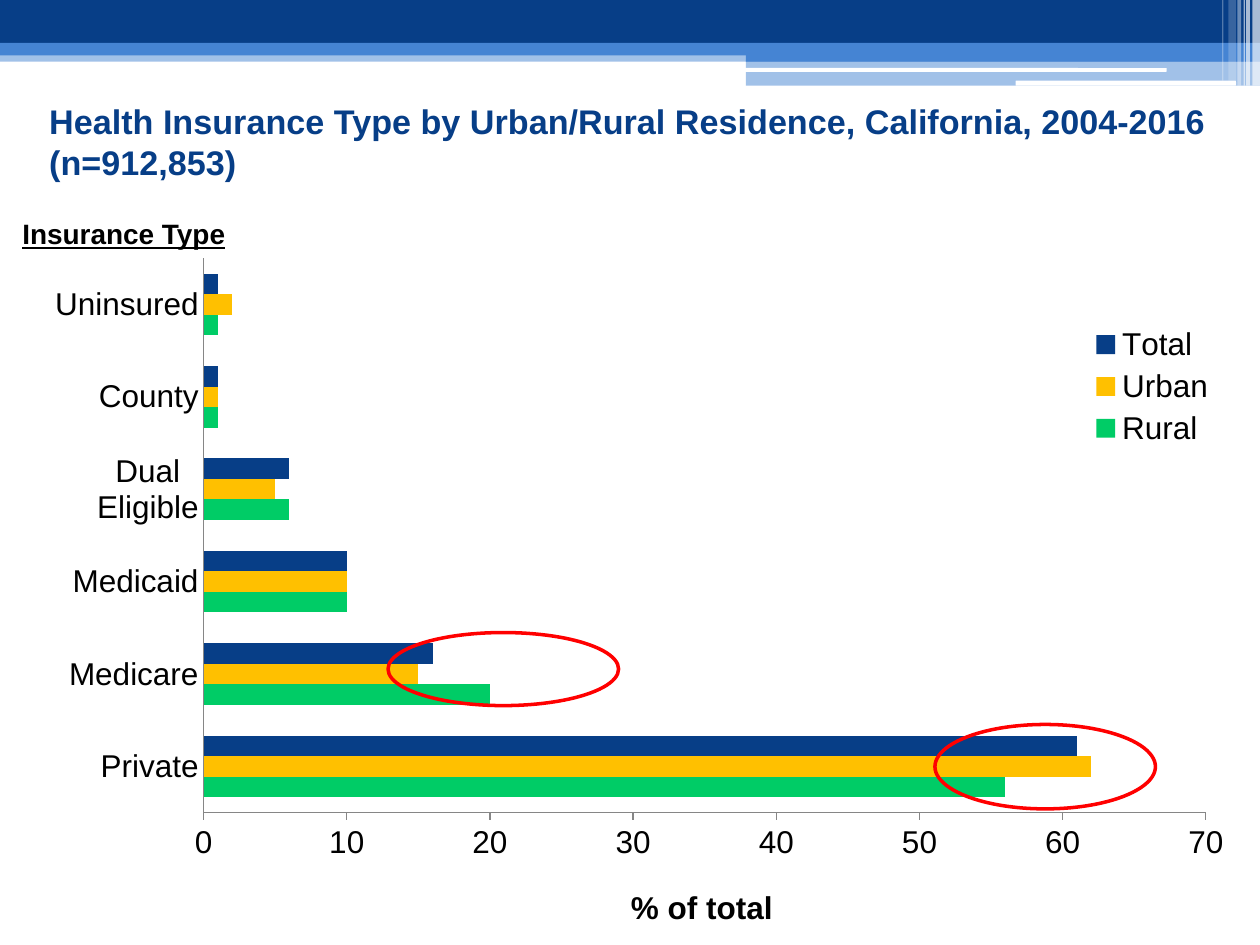
from dataclasses import dataclass

from lxml import etree
from pptx import Presentation
from pptx import util as u
from pptx.chart import data as chart_data
from pptx.dml.color import RGBColor
from pptx.enum import chart as charts, shapes, text
from pptx.oxml import ns


@dataclass(frozen=True)
class Theme:
    """Colours, font and type sizes of the slide."""
    navy: str = "073E87"
    blue: str = "4584D3"
    white: str = "FFFFFF"
    black: str = "000000"
    red: str = "FF0000"
    gold: str = "FFC000"
    green: str = "00CC66"
    grey: str = "868686"
    font: str = "Arial"
    title_size: float = 19.5
    chart_size: float = 18
    label_size: float = 16


THEME = Theme()
SHAPE = shapes.MSO_SHAPE

BANDS = [
    (0, 0.4, 10, 0.09, THEME.blue, 50),
    (0, 0, 10, 0.34, THEME.navy, 100),
    (0, 0.34, 10, 0.1, THEME.blue, 100),
    (5.92, 0.39, 4.08, 0.1, THEME.blue, 100),
    (5.92, 0.48, 4.08, 0.2, THEME.blue, 50),
]
HIGHLIGHTS = [(5.91, 0.54, 3.35, 0.03), (8.06, 0.64, 1.75, 0.04)]
STRIPES = [
    (9.94, 0.06, 0.68, 65),
    (9.89, 0.03, 0.68, 65),
    (9.87, 0.01, 0.68, 60),
    (9.82, 0.03, 0.68, 40),
    (9.75, 0.06, 0.64, 20),
    (9.7, 0.01, 0.64, 30),
]
CATEGORIES = ["Private", "Medicare", "Medicaid", "Dual Eligible", "County", "Uninsured"]
SERIES = [
    ("Rural", [56, 20, 10, 6, 1, 1], THEME.green),
    ("Urban", [62, 15, 10, 5, 1, 2], THEME.gold),
    ("Total", [61, 16, 10, 6, 1, 1], THEME.navy),
]
CALLOUTS = [(3.08, 5.02, 1.83, 0.58), (7.42, 5.75, 1.75, 0.67)]


def colour(value):
    """Turn a hex string into a colour."""
    return RGBColor.from_string(value)


def box(left, top, width, height):
    """Return the four lengths of a frame."""
    return [u.Inches(length) for length in (left, top, width, height)]


def add_bar(slide, frame, fill, opacity=100, kind=SHAPE.RECTANGLE):
    """Add a borderless filled shape with an opacity in percent."""
    shape = slide.shapes.add_shape(kind, *box(*frame))
    shape.shadow.inherit = False
    shape.line.fill.background()
    shape.fill.solid()
    shape.fill.fore_color.rgb = colour(fill)
    if opacity < 100:
        tint = shape.fill._xPr.find(".//" + ns.qn("a:srgbClr"))
        etree.SubElement(tint, ns.qn("a:alpha"), val=str(opacity * 1000))


def add_header(slide):
    """Draw the banded header."""
    for *frame, fill, opacity in BANDS:
        add_bar(slide, frame, fill, opacity)
    for frame in HIGHLIGHTS:
        add_bar(slide, frame, THEME.white, kind=SHAPE.ROUNDED_RECTANGLE)
    for left, width, height, opacity in STRIPES:
        add_bar(slide, (left, 0, width, height), THEME.white, opacity)


def write(paragraph, words, size, fill, underline=False):
    """Add one bold run to a paragraph."""
    run = paragraph.add_run()
    run.text = words
    font = run.font
    font.name, font.size, font.bold = THEME.font, u.Pt(size), True
    font.underline = underline or None
    font.color.rgb = colour(fill)


def add_title(slide, words):
    """Place and fill the title placeholder."""
    title = slide.shapes.title
    title.left, title.top, title.width, title.height = box(0.29, 0.75, 9.51, 0.75)
    frame = title.text_frame
    frame.auto_size = text.MSO_AUTO_SIZE.NONE
    frame.vertical_anchor = text.MSO_ANCHOR.MIDDLE
    frame.paragraphs[0].alignment = text.PP_ALIGN.LEFT
    write(frame.paragraphs[0], words, THEME.title_size, THEME.navy)


def add_label(slide, frame, words, size, wrap=True, underline=False):
    """Add a bold black text box."""
    label = slide.shapes.add_textbox(*box(*frame)).text_frame
    label.word_wrap = wrap
    label.auto_size = text.MSO_AUTO_SIZE.SHAPE_TO_FIT_TEXT
    write(label.paragraphs[0], words, size, THEME.black, underline)


def set_layout(parent, position, target=None):
    """Give a chart part a fixed place as fractions of the chart."""
    layout = parent.find(ns.qn("c:layout"))
    if layout is None:
        layout = etree.Element(ns.qn("c:layout"))
        before = parent.find(ns.qn("c:legendPos"))
        parent.insert(0 if before is None else parent.index(before) + 1, layout)
    manual = etree.SubElement(layout, ns.qn("c:manualLayout"))
    if target:
        etree.SubElement(manual, ns.qn("c:layoutTarget"), val=target)
    for name in ("xMode", "yMode"):
        etree.SubElement(manual, ns.qn("c:" + name), val="edge")
    for name, value in zip("xywh", position):
        etree.SubElement(manual, ns.qn("c:" + name), val=str(value))


def style_axes(chart):
    """Set the scale, ticks and lines of both axes."""
    values, categories = chart.value_axis, chart.category_axis
    values.minimum_scale, values.maximum_scale, values.major_unit = 0, 70, 10
    values.has_major_gridlines = False
    values.major_tick_mark = charts.XL_TICK_MARK.OUTSIDE
    values.tick_labels.number_format = "0"
    values.tick_labels.number_format_is_linked = False
    categories.major_tick_mark = charts.XL_TICK_MARK.NONE
    for axis in (values, categories):
        axis.format.line.color.rgb = colour(THEME.grey)
        axis.format.line.width = u.Pt(0.75)


def add_insurance_chart(slide):
    """Add the clustered bars of insurance type by residence."""
    data = chart_data.CategoryChartData()
    data.categories = CATEGORIES
    for name, values, _ in SERIES:
        data.add_series(name, values)
    chart = slide.shapes.add_chart(
        charts.XL_CHART_TYPE.BAR_CLUSTERED, *box(0.29, 1.83, 9.47, 5.5), data).chart
    chart.has_title = False
    chart.font.name, chart.font.size = THEME.font, u.Pt(THEME.chart_size)
    chart.font.color.rgb = colour(THEME.black)
    plot = chart.plots[0]
    plot.gap_width, plot.overlap, plot.vary_by_categories = 150, 0, False
    for series, (_, _, fill) in zip(plot.series, SERIES):
        series.format.fill.solid()
        series.format.fill.fore_color.rgb = colour(fill)
    style_axes(chart)
    chart.has_legend = True
    chart.legend.position = charts.XL_LEGEND_POSITION.RIGHT
    chart.legend.include_in_layout = False
    area = chart.element.find(".//" + ns.qn("c:plotArea"))
    set_layout(area, (0.14, 0.04, 0.84, 0.8), "inner")
    set_layout(chart.legend._element, (0.88, 0.13, 0.11, 0.19))


def add_callout(slide, frame):
    """Ring a group of bars with an outlined ellipse."""
    ring = slide.shapes.add_shape(SHAPE.OVAL, *box(*frame))
    ring.shadow.inherit = False
    ring.fill.background()
    ring.line.color.rgb = colour(THEME.red)
    ring.line.width = u.Pt(2)


def main():
    """Build and save the slide."""
    presentation = Presentation()
    presentation.slide_width, presentation.slide_height = u.Inches(10), u.Inches(7.5)
    slide = presentation.slides.add_slide(presentation.slide_layouts[5])
    add_header(slide)
    add_insurance_chart(slide)
    add_title(slide, "Health Insurance Type by Urban/Rural Residence, "
                     "California, 2004-2016 (n=912,853)")
    add_label(slide, (4.91, 7, 1.34, 0.4), "% of total", THEME.chart_size, wrap=False)
    for frame in CALLOUTS:
        add_callout(slide, frame)
    add_label(slide, (0.08, 1.67, 1.83, 0.37), "Insurance Type", THEME.label_size,
              underline=True)
    presentation.save("out.pptx")


if __name__ == "__main__":
    main()
